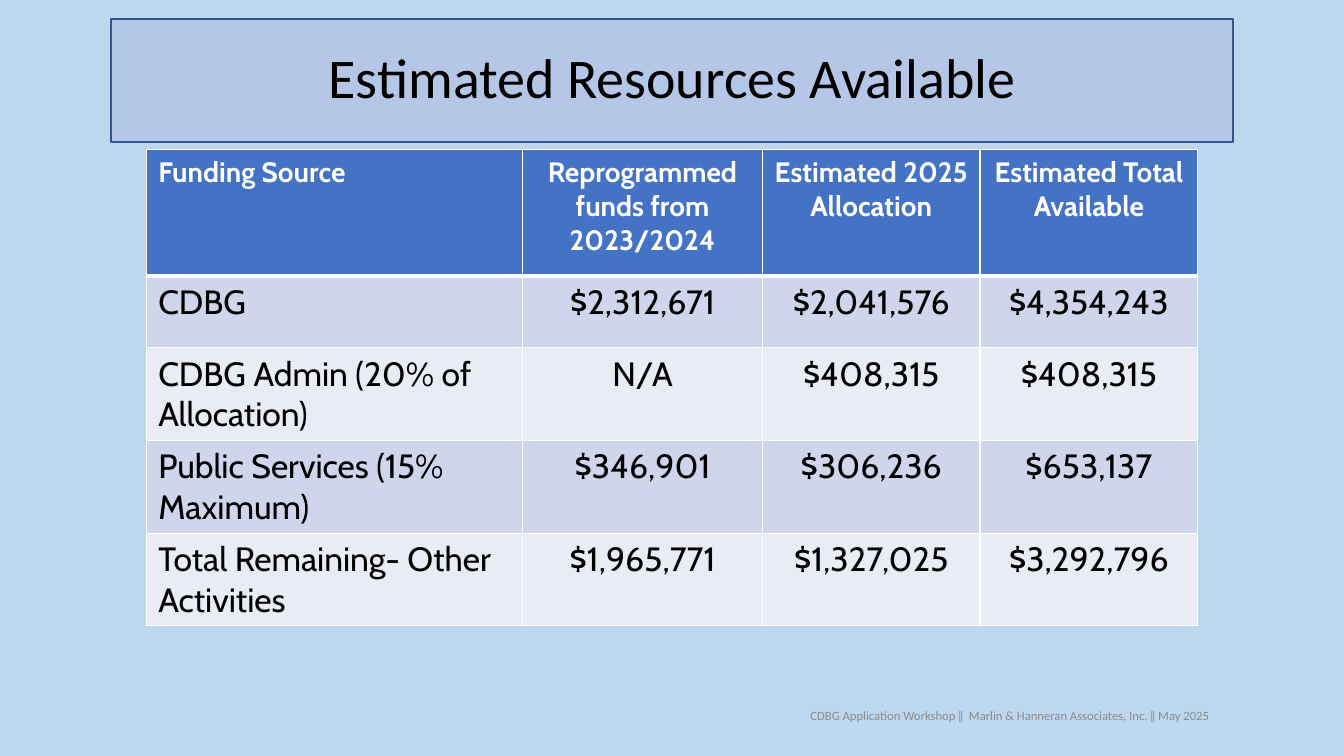
from dataclasses import dataclass

from lxml.etree import SubElement
from pptx import Presentation
from pptx.dml.color import RGBColor
from pptx.enum.text import MSO_ANCHOR, MSO_AUTO_SIZE, PP_ALIGN
from pptx.oxml.ns import qn
from pptx.util import Inches, Pt


@dataclass(frozen=True)
class Theme:
    background: str = "BDD7EE"
    title_fill: str = "B4C7E7"
    title_line: str = "325491"
    header_fill: str = "4472C4"
    bands: tuple = ("CFD5EA", "E9EBF5")
    dark: str = "000000"
    light: str = "FFFFFF"
    muted: str = "8C8C8C"
    heading_font: str = "Calibri"
    table_font: str = "Cabin"
    title_size: int = 40
    header_size: int = 20
    body_size: int = 24
    footer_size: int = 9


THEME = Theme()
SLIDE_WIDTH, SLIDE_HEIGHT = 13.33, 7.5

# Boxes: left, top, width, height in inches
TITLE_BOX = (1.1, 0.19, 11.13, 1.22)
TABLE_BOX = (1.45, 1.48, 10.43, 4.1)
FOOTER_BOX = (7.94, 6.91, 4.48, 0.4)

COLUMN_SHARES = (0.358, 0.228, 0.207, 0.207)
HEADER_SHARE = 0.307

FUNDING = [
    ("Funding Source", "Reprogrammed funds from 2023/2024",
     "Estimated 2025 Allocation", "Estimated Total Available"),
    ("CDBG", "$2,312,671", "$2,041,576", "$4,354,243"),
    ("CDBG Admin (20% of Allocation)", "N/A", "$408,315", "$408,315"),
    ("Public Services (15% Maximum)", "$346,901", "$306,236", "$653,137"),
    ("Total Remaining- Other Activities", "$1,965,771", "$1,327,025", "$3,292,796"),
]


def color(value):
    return RGBColor.from_string(value)


def write(paragraph, text, font_name, size, font_color, bold=False):
    run = paragraph.add_run()
    run.text = text
    run.font.name = font_name
    run.font.size = Pt(size)
    run.font.bold = bold
    run.font.color.rgb = color(font_color)


def set_borders(cell, widths):
    """Draw the left, right, top and bottom borders, widths in points."""
    properties = cell._tc.get_or_add_tcPr()
    for side, width in zip("LRTB", widths):
        line = SubElement(properties, qn(f"a:ln{side}"), w=str(Pt(width)))
        fill = SubElement(line, qn("a:solidFill"))
        SubElement(fill, qn("a:srgbClr"), val=THEME.light)


def add_title(slide, box, text):
    title = slide.shapes.title
    title.left, title.top, title.width, title.height = map(Inches, box)
    title.fill.solid()
    title.fill.fore_color.rgb = color(THEME.title_fill)
    title.line.color.rgb = color(THEME.title_line)
    title.line.width = Pt(1)
    frame = title.text_frame
    frame.auto_size = MSO_AUTO_SIZE.NONE
    frame.vertical_anchor = MSO_ANCHOR.MIDDLE
    paragraph = frame.paragraphs[0]
    paragraph.alignment = PP_ALIGN.CENTER
    paragraph.line_spacing = 0.9
    write(paragraph, text, THEME.heading_font, THEME.title_size, THEME.dark)


def format_cell(cell, text, row, column):
    is_header = row == 0
    set_borders(cell, (1, 1, 3 if row == 1 else 1, 3 if is_header else 1))
    cell.fill.solid()
    cell.fill.fore_color.rgb = color(
        THEME.header_fill if is_header else THEME.bands[(row - 1) % 2])
    cell.margin_left = cell.margin_right = Inches(0.12)
    cell.margin_top = cell.margin_bottom = Inches(0.06)
    paragraph = cell.text_frame.paragraphs[0]
    paragraph.alignment = PP_ALIGN.CENTER if column else PP_ALIGN.LEFT
    write(paragraph, text, THEME.table_font,
          THEME.header_size if is_header else THEME.body_size,
          THEME.light if is_header else THEME.dark, bold=is_header)


def add_funding_table(slide, box, rows):
    width, height = box[2:]
    table = slide.shapes.add_table(len(rows), len(rows[0]), *map(Inches, box)).table
    table.horz_banding = False
    for column, share in zip(table.columns, COLUMN_SHARES):
        column.width = Inches(width * share)
    body_share = (1 - HEADER_SHARE) / (len(rows) - 1)
    for index, values in enumerate(rows):
        share = body_share if index else HEADER_SHARE
        table.rows[index].height = Inches(height * share)
        for column, text in enumerate(values):
            format_cell(table.cell(index, column), text, index, column)


def add_footer(slide, box, text):
    frame = slide.shapes.add_textbox(*map(Inches, box)).text_frame
    frame.word_wrap = True
    frame.vertical_anchor = MSO_ANCHOR.MIDDLE
    paragraph = frame.paragraphs[0]
    paragraph.line_spacing = 0.9
    paragraph.space_after = Pt(6)
    write(paragraph, text, THEME.heading_font, THEME.footer_size, THEME.muted)


def main():
    presentation = Presentation()
    presentation.slide_width = Inches(SLIDE_WIDTH)
    presentation.slide_height = Inches(SLIDE_HEIGHT)
    slide = presentation.slides.add_slide(
        presentation.slide_layouts.get_by_name("Title Only"))
    slide.background.fill.solid()
    slide.background.fill.fore_color.rgb = color(THEME.background)

    add_title(slide, TITLE_BOX, "Estimated Resources Available")
    add_footer(slide, FOOTER_BOX,
               "CDBG Application Workshop ‖  Marlin & Hanneran Associates, Inc. ‖ May 2025")
    add_funding_table(slide, TABLE_BOX, FUNDING)
    presentation.save("out.pptx")


if __name__ == "__main__":
    main()
